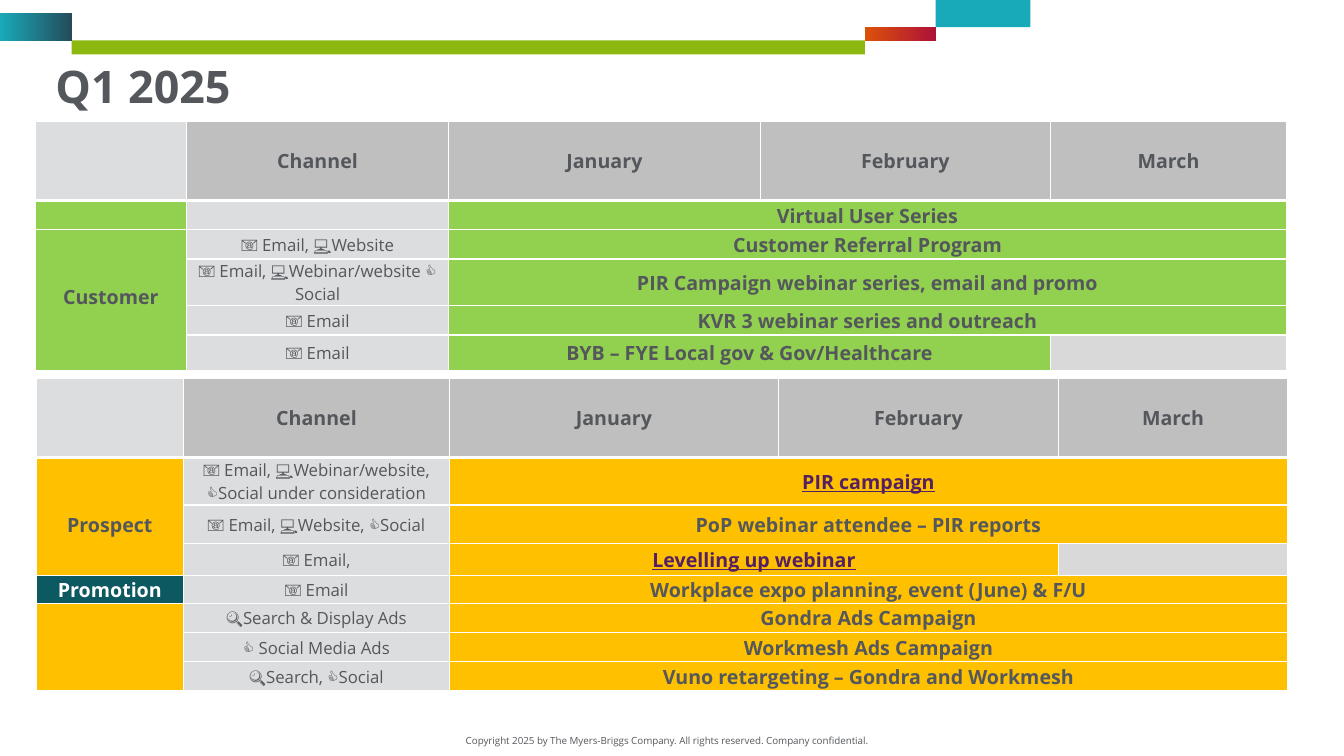
from dataclasses import dataclass
from itertools import product

from lxml.etree import SubElement
from pptx import Presentation
from pptx.dml.color import RGBColor as RGB
from pptx.enum.shapes import MSO_SHAPE as Shape
from pptx.enum.text import MSO_ANCHOR as Anchor, PP_ALIGN as Align
from pptx.oxml.ns import qn
from pptx.util import Inches, Pt


@dataclass(frozen=True)
class Theme:
    font: str = "Open Sans"
    text: str = "54575B"
    white: str = "FFFFFF"
    link: str = "552062"
    header: str = "BFBFBF"
    channel: str = "DCDDDF"
    idle: str = "D9D9D9"
    customer: str = "92D050"
    prospect: str = "FFC000"
    promotion: str = "0D5962"
    teal: str = "19AABA"
    navy: str = "244C5A"
    lime: str = "8CB80F"
    orange: str = "DC500A"
    red: str = "AE1237"
    title_size: int = 32
    label_size: int = 14
    channel_size: int = 12
    footer_size: int = 7


@dataclass(frozen=True)
class Bar:
    box: tuple[float, float, float, float]
    colors: tuple[str, ...]


@dataclass(frozen=True)
class Activity:
    height: float
    channel: str
    name: str
    months: int = 3
    link: bool = False


@dataclass(frozen=True)
class Group:
    label: str
    fill: str
    activities: list[Activity]
    color: str = Theme.text


@dataclass(frozen=True)
class Plan:
    left: float
    top: float
    cols: list[float]
    fill: str
    groups: list[Group]


T = Theme()
HEADER_HEIGHT = 0.79
HEADINGS = ["", "Channel", "January", "February", "March"]
BARS = [
    Bar((0.71, 0.4, 7.87, 0.14), (T.lime,)),
    Bar((0, 0.13, 0.71, 0.28), (T.teal, T.navy)),
    Bar((9.28, 0, 0.94, 0.27), (T.teal,)),
    Bar((8.58, 0.27, 0.7, 0.14), (T.orange, T.red)),
]
PLANS = [
    Plan(0.35, 1.2, [1.5, 2.6, 3.09, 2.88, 2.34], T.customer, [
        Group("", T.customer, [Activity(0.29, "", "Virtual User Series")]),
        Group("Customer", T.customer, [
            Activity(0.29, "📧 Email, 💻Website", "Customer Referral Program"),
            Activity(0.46, "📧 Email, 💻Webinar/website 👍Social",
                     "PIR Campaign webinar series, email and promo"),
            Activity(0.29, "📧 Email", "KVR 3 webinar series and outreach"),
            Activity(0.35, "📧 Email", "BYB – FYE Local gov & Gov/Healthcare", months=2),
        ]),
    ]),
    Plan(0.36, 3.75, [1.46, 2.64, 3.26, 2.78, 2.27], T.prospect, [
        Group("Prospect", T.prospect, [
            Activity(0.47, "📧 Email, 💻Webinar/website,\n👍Social under consideration",
                     "PIR campaign", link=True),
            Activity(0.38, "📧 Email, 💻Website, 👍Social", "PoP webinar attendee – PIR reports"),
            Activity(0.32, "📧 Email,", "Levelling up webinar", months=2, link=True),
        ]),
        Group("Promotion", T.promotion, [
            Activity(0.27, "📧 Email", "Workplace expo planning, event (June) & F/U"),
        ], T.white),
        Group("", T.prospect, [
            Activity(0.29, "🔍Search & Display Ads", "Gondra Ads Campaign"),
            Activity(0.29, "👍 Social Media Ads", "Workmesh Ads Campaign"),
            Activity(0.29, "🔍Search, 👍Social", "Vuno retargeting – Gondra and Workmesh"),
        ]),
    ]),
]


def write(tf, text: str, size: int, color: str = T.text, align=Align.CENTER, **fmt) -> None:
    """Fill a text frame, one paragraph per line of text."""
    for i, line in enumerate(text.split("\n")):
        p = tf.add_paragraph() if i else tf.paragraphs[0]
        p.alignment = align
        r = p.add_run()
        r.text = line
        for name, value in {"name": T.font, "size": Pt(size), **fmt}.items():
            setattr(r.font, name, value)
        r.font.color.rgb = RGB.from_string(color)


def add_bar(s, bar: Bar) -> None:
    sp = s.shapes.add_shape(Shape.RECTANGLE, *map(Inches, bar.box))
    sp.shadow.inherit = False
    sp.line.fill.background()
    if len(bar.colors) == 1:
        sp.fill.solid()
        sp.fill.fore_color.rgb = RGB.from_string(bar.colors[0])
        return
    sp.fill.gradient()
    sp.fill.gradient_angle = 0
    for stop, color in zip(sp.fill.gradient_stops, bar.colors):
        stop.color.rgb = RGB.from_string(color)


def prepare_cell(cell, row: int) -> None:
    """Set margins, white borders and a small empty-text size."""
    margins = {"margin_left": 0.01, "margin_right": 0.01, "margin_top": 0.01, "margin_bottom": 0}
    for name, value in margins.items():
        setattr(cell, name, Inches(value))
    cell.vertical_anchor = Anchor.MIDDLE
    tc_pr = cell._tc.get_or_add_tcPr()
    for side in "LRTB":
        width = 3 if (row, side) in ((0, "B"), (1, "T")) else 1
        ln = SubElement(tc_pr, qn(f"a:ln{side}"), w=str(Pt(width)))
        SubElement(SubElement(ln, qn("a:solidFill")), qn("a:srgbClr"), val=T.white)
    SubElement(cell.text_frame.paragraphs[0]._p, qn("a:endParaRPr"), sz=str(T.channel_size * 100))


def set_cell(cell, fill: str, text: str = "", size: int = T.label_size, **fmt) -> None:
    cell.fill.solid()
    cell.fill.fore_color.rgb = RGB.from_string(fill)
    if text:
        write(cell.text_frame, text, size, **{"bold": True, **fmt})


def add_plan(s, plan: Plan) -> None:
    heights = [HEADER_HEIGHT] + [a.height for g in plan.groups for a in g.activities]
    table = s.shapes.add_table(len(heights), len(plan.cols), Inches(plan.left), Inches(plan.top),
                               Inches(sum(plan.cols)), Inches(sum(heights))).table
    table.first_row = table.horz_banding = False
    for col, width in zip(table.columns, plan.cols):
        col.width = Inches(width)
    for row, height in zip(table.rows, heights):
        row.height = Inches(height)
    for row, col in product(range(len(heights)), range(len(plan.cols))):
        prepare_cell(table.cell(row, col), row)
    for col, heading in enumerate(HEADINGS):
        set_cell(table.cell(0, col), T.header if heading else T.channel, heading)

    row = 1
    for group in plan.groups:
        label = table.cell(row, 0)
        if len(group.activities) > 1:
            label.merge(table.cell(row + len(group.activities) - 1, 0))
            label.vertical_anchor = Anchor.TOP
            label.margin_top = Inches(0.53)
        set_cell(label, group.fill, group.label, color=group.color)
        for activity in group.activities:
            set_cell(table.cell(row, 1), T.channel, activity.channel, T.channel_size, bold=False)
            name = table.cell(row, 2)
            name.merge(table.cell(row, 1 + activity.months))
            set_cell(name, plan.fill, activity.name, underline=activity.link,
                     color=T.link if activity.link else T.text)
            for col in range(2 + activity.months, len(plan.cols)):
                set_cell(table.cell(row, col), T.idle)
            row += 1


def main() -> None:
    prs = Presentation()
    prs.slide_width, prs.slide_height = Inches(13.33), Inches(7.5)
    s = prs.slides.add_slide(prs.slide_layouts[5])
    for bar in BARS:
        add_bar(s, bar)

    title = s.shapes.title
    title.left, title.top, title.width, title.height = map(Inches, (0.45, 0.59, 11.3, 0.99))
    title.text_frame.vertical_anchor = Anchor.TOP
    write(title.text_frame, "Q1 2025", T.title_size, align=Align.LEFT, bold=True)
    title.text_frame.paragraphs[0].line_spacing = 0.9

    for plan in PLANS:
        add_plan(s, plan)

    footer = s.shapes.add_textbox(*map(Inches, (4.46, 7.24, 4.31, 0.22))).text_frame
    footer.word_wrap = True
    write(footer, "Copyright 2025 by The Myers-Briggs Company. All rights reserved. "
          "Company confidential.", T.footer_size)
    prs.save("out.pptx")


if __name__ == "__main__":
    main()
